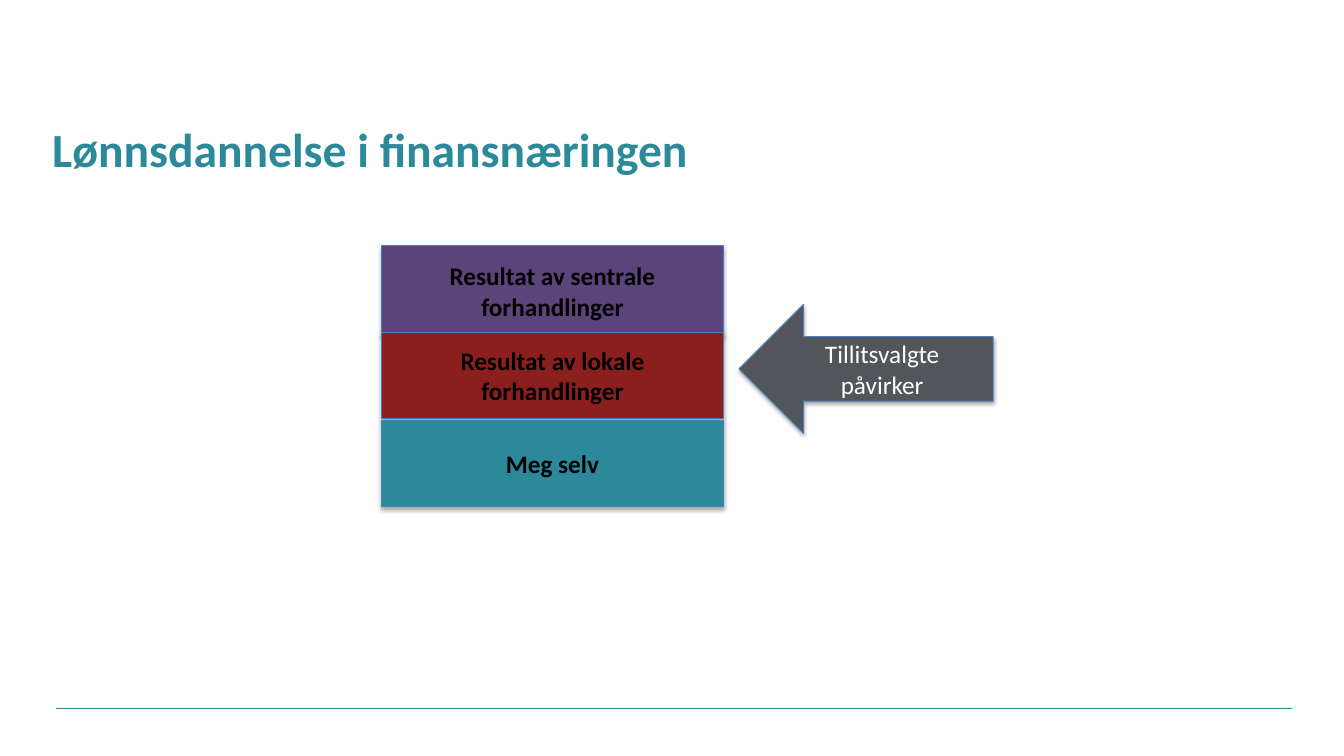
from pptx import Presentation
from pptx.dml.color import RGBColor
from pptx.enum.shapes import MSO_CONNECTOR as CONNECTOR, MSO_SHAPE as SHAPE
from pptx.enum.text import MSO_ANCHOR as ANCHOR, PP_ALIGN as ALIGN
from pptx.oxml.ns import qn
from pptx.util import Pt
from lxml.etree import SubElement

PX = 9144  # EMU per px, 100 px to the inch
FONT = "Calibri"
COLORS = {
    "teal": "2B899A",
    "purple": "5A447A",
    "red": "8B1F1E",
    "gray": "52565A",
    "outline": "4B7EBC",
    "black": "000000",
    "white": "FFFFFF",
}


def rgb(name):
    return RGBColor.from_string(COLORS[name])


def emu(*lengths):
    return [length * PX for length in lengths]


def write(shape, text, size, color, bold, align, anchor):
    frame = shape.text_frame
    frame.word_wrap = True
    frame.vertical_anchor = anchor
    paragraph = frame.paragraphs[0]
    paragraph.alignment = align
    run = paragraph.add_run()
    run.text = text
    font = run.font
    font.name, font.size, font.bold = FONT, Pt(size), bold
    font.color.rgb = rgb(color)


def add_soft_shadow(shape):
    shape.shadow.inherit = False
    effects = shape._element.spPr.find(qn("a:effectLst"))
    outer = SubElement(effects, qn("a:outerShdw"), blurRad="40000",
                       dist="23000", dir="5400000", rotWithShape="0")
    tint = SubElement(outer, qn("a:srgbClr"), val=COLORS["black"])
    SubElement(tint, qn("a:alpha"), val="35000")


def add_block(slide, kind, box, text, fill, color="black", bold=True):
    block = slide.shapes.add_shape(kind, *emu(*box))
    block.fill.solid()
    block.fill.fore_color.rgb = rgb(fill)
    block.line.color.rgb = rgb("outline")
    block.line.width = Pt(0.75)
    add_soft_shadow(block)
    write(block, text, 18, color, bold, ALIGN.CENTER, ANCHOR.MIDDLE)
    return block


def add_title(slide, text):
    title = slide.shapes.add_textbox(*emu(42, 56, 1200, 125))
    write(title, text, 34, "teal", True, ALIGN.LEFT, ANCHOR.BOTTOM)


def add_footer_rule(slide):
    rule = slide.shapes.add_connector(CONNECTOR.STRAIGHT, *emu(56, 703, 1281, 703))
    rule.line.color.rgb = rgb("teal")
    rule.line.width = Pt(1)
    SubElement(rule._element.spPr, qn("a:effectLst"))


def main():
    prs = Presentation()
    prs.slide_width, prs.slide_height = emu(1333, 750)
    slide = prs.slides.add_slide(prs.slide_layouts[6])

    # Footer line and title
    add_footer_rule(slide)
    add_title(slide, "Lønnsdannelse i finansnæringen")

    # Stack of wage components
    components = [
        ("Resultat av sentrale forhandlinger", "purple", 244, 89),
        ("Resultat av lokale forhandlinger", "red", 330, 85),
        ("Meg selv", "teal", 417, 86),
    ]
    for text, fill, top, height in components:
        add_block(slide, SHAPE.RECTANGLE, (378, top, 340, height), text, fill)

    # Arrow pointing left at the stack
    influence = add_block(slide, SHAPE.RIGHT_ARROW, (733, 302, 252, 128),
                          "Tillitsvalgte påvirker", "gray", "white", False)
    influence._element.spPr.find(qn("a:xfrm")).set("flipH", "1")

    prs.save("out.pptx")


if __name__ == "__main__":
    main()
